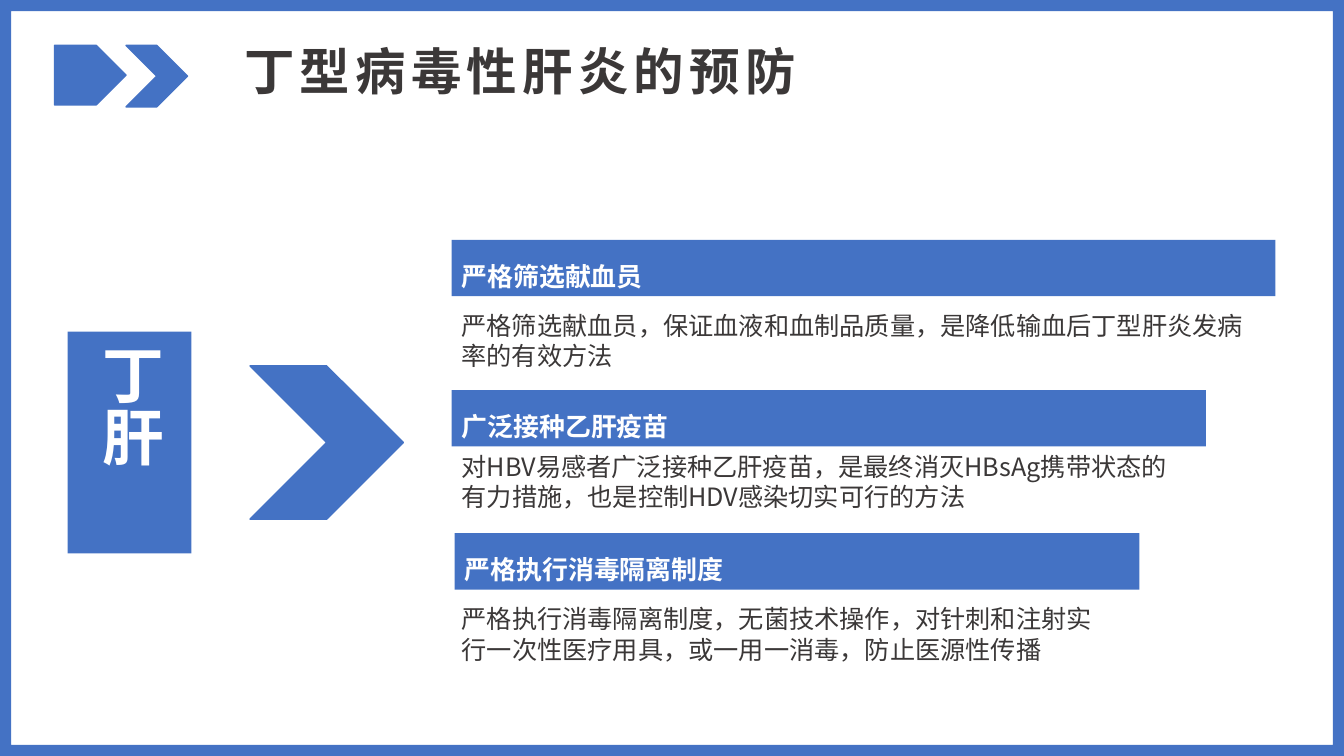
from lxml.etree import SubElement
from pptx import Presentation
from pptx.dml.color import RGBColor
from pptx.enum.shapes import MSO_SHAPE as Preset
from pptx.enum.text import MSO_ANCHOR as Anchor, MSO_AUTO_SIZE as Fit, PP_ALIGN as Align
from pptx.oxml.ns import qn
from pptx.util import Inches, Pt

HEADING = "丁型病毒性肝炎的预防"
TOPIC = "丁肝"
MEASURES = [
    {"name": "严格筛选献血员",
     "detail": "严格筛选献血员，保证血液和血制品质量，是降低输血后丁型肝炎发病率的有效方法",
     "bar": (4.48, 2.38, 8.17), "note": (3.03, 8.07)},
    {"name": "广泛接种乙肝疫苗",
     "detail": "对HBV易感者广泛接种乙肝疫苗，是最终消灭HBsAg携带状态的有力措施，也是控制HDV感染切实可行的方法",
     "bar": (4.48, 3.87, 7.48), "note": (4.43, 7.35)},
    {"name": "严格执行消毒隔离制度",
     "detail": "严格执行消毒隔离制度，无菌技术操作，对针刺和注射实行一次性医疗用具，或一用一消毒，防止医源性传播",
     "bar": (4.51, 5.29, 6.79), "note": (5.94, 6.51)},
]

WIDTH, HEIGHT, BORDER = 13.33, 7.5, 0.11
COLUMN, BAR_HEIGHT, NOTE_HEIGHT = 4.48, 0.56, 0.7
BLUE, WHITE, DARK = "4472C4", "FFFFFF", "3B3838"
FACE = "Noto Sans CJK SC"
TITLE_FONT = {"size": Pt(36), "bold": True, "name": FACE}
BAR_FONT = {"size": Pt(18.5), "bold": True, "name": FACE}
NOTE_FONT = {"size": Pt(18), "bold": False, "name": FACE}
TOPIC_FONT = {"size": Pt(44), "bold": True, "name": FACE}
BAR_FRAME = {"word_wrap": True, "auto_size": Fit.NONE, "vertical_anchor": Anchor.TOP}
TEXT_FRAME = {**BAR_FRAME, "auto_size": Fit.SHAPE_TO_FIT_TEXT}
TOPIC_FRAME = {**BAR_FRAME, "vertical_anchor": Anchor.BOTTOM,
               "margin_left": Inches(0.26), "margin_right": Inches(0.26),
               "margin_top": Inches(0.13), "margin_bottom": Inches(0.13)}
LEFT = {"alignment": Align.LEFT}
BAR_LINES = {"alignment": Align.LEFT, "line_spacing": 1.5}
TOPIC_LINES = {"alignment": Align.JUSTIFY, "line_spacing": 1.5}


def apply(target, values):
    """Set every named attribute on the target."""
    for name, value in values.items():
        setattr(target, name, value)


def inches(*lengths):
    """Convert lengths to slide units."""
    return [Inches(length) for length in lengths]


def paint(fill, colour):
    """Fill with one solid hex colour."""
    fill.solid()
    fill.fore_color.rgb = RGBColor.from_string(colour)


def write(holder, words, colour, font, frame, lines):
    """Put formatted words in a shape and return their run."""
    apply(holder.text_frame, frame)
    paragraph = holder.text_frame.paragraphs[0]
    apply(paragraph, lines)
    run = paragraph.add_run()
    run.text = words
    apply(run.font, font)
    run.font.color.rgb = RGBColor.from_string(colour)
    SubElement(run.font._element, qn("a:ea"), typeface=FACE)
    return run


def block(slide, preset, place, outlined=False):
    """Add a blue preset shape."""
    shape = slide.shapes.add_shape(preset, *inches(*place))
    shape.shadow.inherit = False
    paint(shape.fill, BLUE)
    if outlined:
        paint(shape.line.fill, BLUE)
        shape.line.width = Pt(1)
    else:
        shape.line.fill.background()
    return shape


def add_heading(slide):
    """Place the slide title and the arrows beside it."""
    border = block(slide, Preset.FRAME, (0, 0, WIDTH, HEIGHT))
    border.adjustments[0] = BORDER / HEIGHT
    block(slide, Preset.CHEVRON, (1.25, 0.45, 0.61, 0.61), True)
    block(slide, Preset.PENTAGON, (0.54, 0.45, 0.71, 0.59), True)
    title = slide.shapes.title
    apply(title, dict(zip(("left", "top", "width", "height"), inches(2.32, 0.35, 6.52, 0.7))))
    run = write(title, HEADING, DARK, TITLE_FONT, TEXT_FRAME, LEFT)
    run.font._element.set("spc", "380")


def add_measure(slide, measure):
    """Place one named bar with its explanation."""
    bar = block(slide, Preset.RECTANGLE, (*measure["bar"], BAR_HEIGHT))
    write(bar, measure["name"], WHITE, BAR_FONT, BAR_FRAME, BAR_LINES)
    top, width = measure["note"]
    note = slide.shapes.add_textbox(*inches(COLUMN, top, width, NOTE_HEIGHT))
    write(note, measure["detail"], DARK, NOTE_FONT, TEXT_FRAME, LEFT)


def add_topic(slide):
    """Place the vertical topic label and its arrow."""
    topic = block(slide, Preset.RECTANGLE, (0.67, 3.29, 1.23, 2.2))
    write(topic, TOPIC, WHITE, TOPIC_FONT, TOPIC_FRAME, TOPIC_LINES)
    topic.text_frame._txBody.bodyPr.set("vert", "eaVert")
    block(slide, Preset.CHEVRON, (2.48, 3.63, 1.52, 1.52), True)


def main():
    """Build and save the slide."""
    deck = Presentation()
    deck.slide_width, deck.slide_height = inches(WIDTH, HEIGHT)
    slide = deck.slides.add_slide(deck.slide_layouts[5])
    paint(slide.background.fill, WHITE)
    add_heading(slide)
    for measure in MEASURES:
        add_measure(slide, measure)
    add_topic(slide)
    deck.save("out.pptx")


if __name__ == "__main__":
    main()
